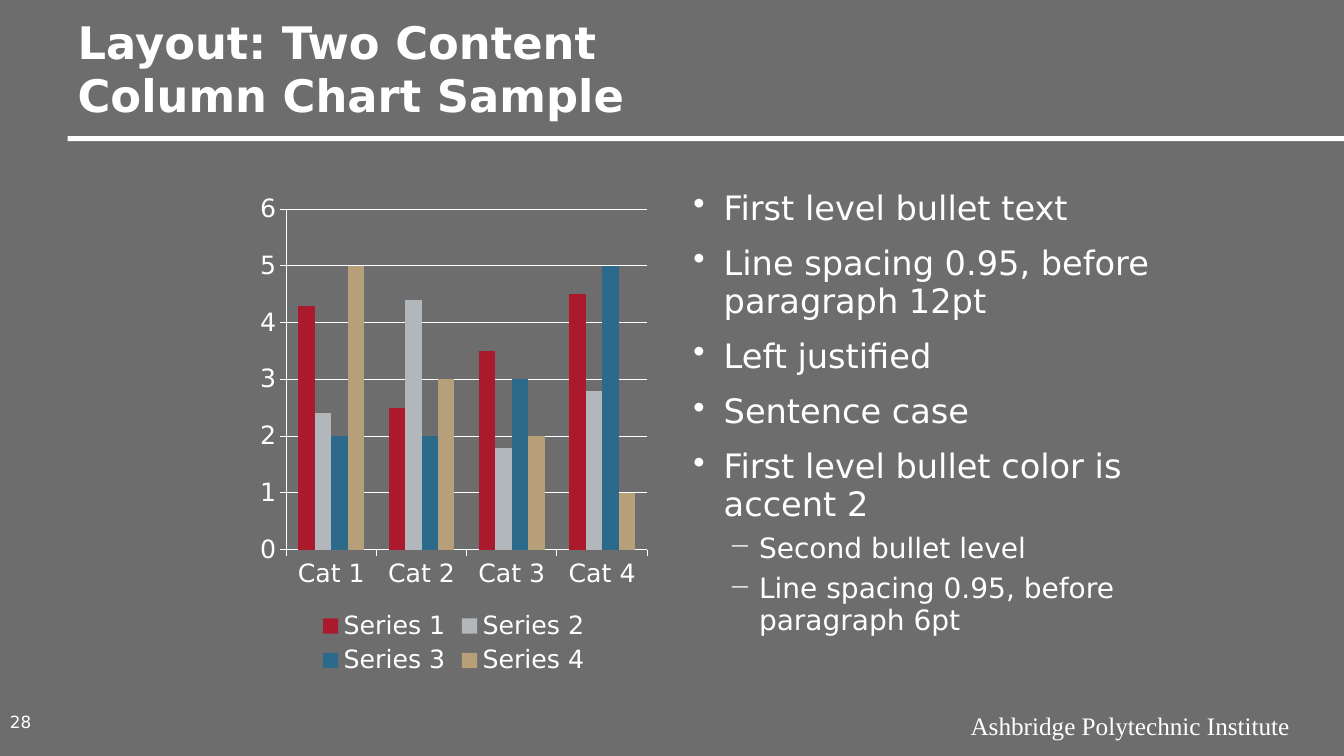
"""Build a two-content slide with a column chart and a bullet list."""
from pptx import Presentation
from pptx import util as u
from pptx.chart import data as chart_data
from pptx.dml import color
from pptx.enum import chart as charts, shapes, text
from pptx.oxml import ns
from lxml import etree

COLORS = {"background": "6D6D6D", "white": "FFFFFF", "red": "AB192D",
          "silver": "B2B7BB", "blue": "2C6A8C", "tan": "B7A079"}
SANS, SERIF = "DejaVu Sans", "Times New Roman"
CATEGORIES = ["Cat 1", "Cat 2", "Cat 3", "Cat 4"]
SERIES = [("Series 1", "red", (4.3, 2.5, 3.5, 4.5)),
          ("Series 2", "silver", (2.4, 4.4, 1.8, 2.8)),
          ("Series 3", "blue", (2, 2, 3, 5)),
          ("Series 4", "tan", (5, 3, 2, 1))]
BULLETS = [(0, "First level bullet text"),
           (0, "Line spacing 0.95, before paragraph 12pt"),
           (0, "Left justified"),
           (0, "Sentence case"),
           (0, "First level bullet color is accent 2"),
           (1, "Second bullet level"),
           (1, "Line spacing 0.95, before paragraph 6pt")]
LEVELS = [{"char": "•", "size": 24, "before": 12, "indent": 0.3},
          {"char": "─", "size": 20, "before": 6, "indent": 0.65}]


def rgb(name):
    return color.RGBColor.from_string(COLORS[name])


def place(*lengths):
    return [u.Inches(length) for length in lengths]


def paint(target, name):
    target.fill.solid()
    target.fill.fore_color.rgb = rgb(name)


def style_font(font, size, name=SANS, bold=False):
    font.size, font.name, font.bold = u.Pt(size), name, bold
    font.color.rgb = rgb("white")


def add_title(slide, words):
    title = slide.shapes.title
    title.left, title.top, title.width, title.height = place(0.67, 0.38, 12, 0.88)
    frame = title.text_frame
    frame.text = words
    frame.auto_size = text.MSO_AUTO_SIZE.NONE
    frame.vertical_anchor = text.MSO_ANCHOR.BOTTOM
    para = frame.paragraphs[0]
    para.alignment = text.PP_ALIGN.LEFT
    style_font(para.font, 32, bold=True)


def add_rule(slide):
    rule = slide.shapes.add_shape(shapes.MSO_SHAPE.RECTANGLE,
                                  *place(0.67, 1.35, 12.67, 0.05))
    rule.shadow.inherit = False
    paint(rule, "white")
    rule.line.fill.background()


def add_label(slide, words, at, size, name=SANS,
              align=text.PP_ALIGN.LEFT, anchor=text.MSO_ANCHOR.TOP):
    frame = slide.shapes.add_textbox(*place(*at)).text_frame
    frame.word_wrap = True
    frame.vertical_anchor = anchor
    para = frame.paragraphs[0]
    para.text, para.alignment = words, align
    style_font(para.font, size, name)


def set_bullet(para, char, indent):
    props = para._p.get_or_add_pPr()
    props.set("marL", str(u.Inches(indent)))
    props.set("indent", str(u.Inches(-0.3)))
    bullet_color = etree.SubElement(props, ns.qn("a:buClr"))
    etree.SubElement(bullet_color, ns.qn("a:srgbClr"), val=COLORS["white"])
    etree.SubElement(props, ns.qn("a:buChar"), char=char)


def add_bullets(slide):
    frame = slide.shapes.add_textbox(*place(6.78, 1.83, 5.33, 4.92)).text_frame
    frame.word_wrap = True
    for index, (depth, words) in enumerate(BULLETS):
        para = frame.add_paragraph() if index else frame.paragraphs[0]
        level = LEVELS[depth]
        para.text, para.level = words, depth
        para.line_spacing, para.space_before = 0.95, u.Pt(level["before"])
        set_bullet(para, level["char"], level["indent"])
        style_font(para.font, level["size"])


def style_axis(axis, gridlines):
    axis.has_major_gridlines = gridlines
    axis.major_tick_mark = charts.XL_TICK_MARK.OUTSIDE
    axis.minor_tick_mark = charts.XL_TICK_MARK.NONE
    lines = [axis.format.line]
    if gridlines:
        lines.append(axis.major_gridlines.format.line)
    for line in lines:
        line.color.rgb, line.width = rgb("white"), u.Pt(0.75)


def add_column_chart(slide):
    values = chart_data.CategoryChartData()
    values.categories = CATEGORIES
    for name, _, numbers in SERIES:
        values.add_series(name, numbers)
    chart = slide.shapes.add_chart(charts.XL_CHART_TYPE.COLUMN_CLUSTERED,
                                   *place(2.5, 1.83, 4, 4.92), values).chart
    chart.has_title = False
    style_font(chart.font, 18)
    chart.has_legend = True
    chart.legend.position = charts.XL_LEGEND_POSITION.BOTTOM
    chart.legend.include_in_layout = False
    style_axis(chart.category_axis, False)
    style_axis(chart.value_axis, True)
    axis = chart.value_axis
    axis.minimum_scale, axis.maximum_scale, axis.major_unit = 0, 6, 1
    plot = chart.plots[0]
    plot.gap_width, plot.overlap, plot.vary_by_categories = 150, 0, False
    for series, (_, shade, _) in zip(plot.series, SERIES):
        paint(series.format, shade)
        series.invert_if_negative = False


def main():
    deck = Presentation()
    deck.slide_width, deck.slide_height = place(13.33, 7.5)
    slide = deck.slides.add_slide(deck.slide_layouts[5])
    paint(slide.background, "background")
    add_rule(slide)
    add_label(slide, "Ashbridge Polytechnic Institute", (8, 7, 4.89, 0.4), 18,
              SERIF, text.PP_ALIGN.RIGHT)
    add_title(slide, "Layout: Two Content \vColumn Chart Sample")
    add_column_chart(slide)
    add_bullets(slide)
    add_label(slide, "28", (0, 6.99, 0.67, 0.34), 12,
              anchor=text.MSO_ANCHOR.MIDDLE)
    deck.save("out.pptx")


if __name__ == "__main__":
    main()
